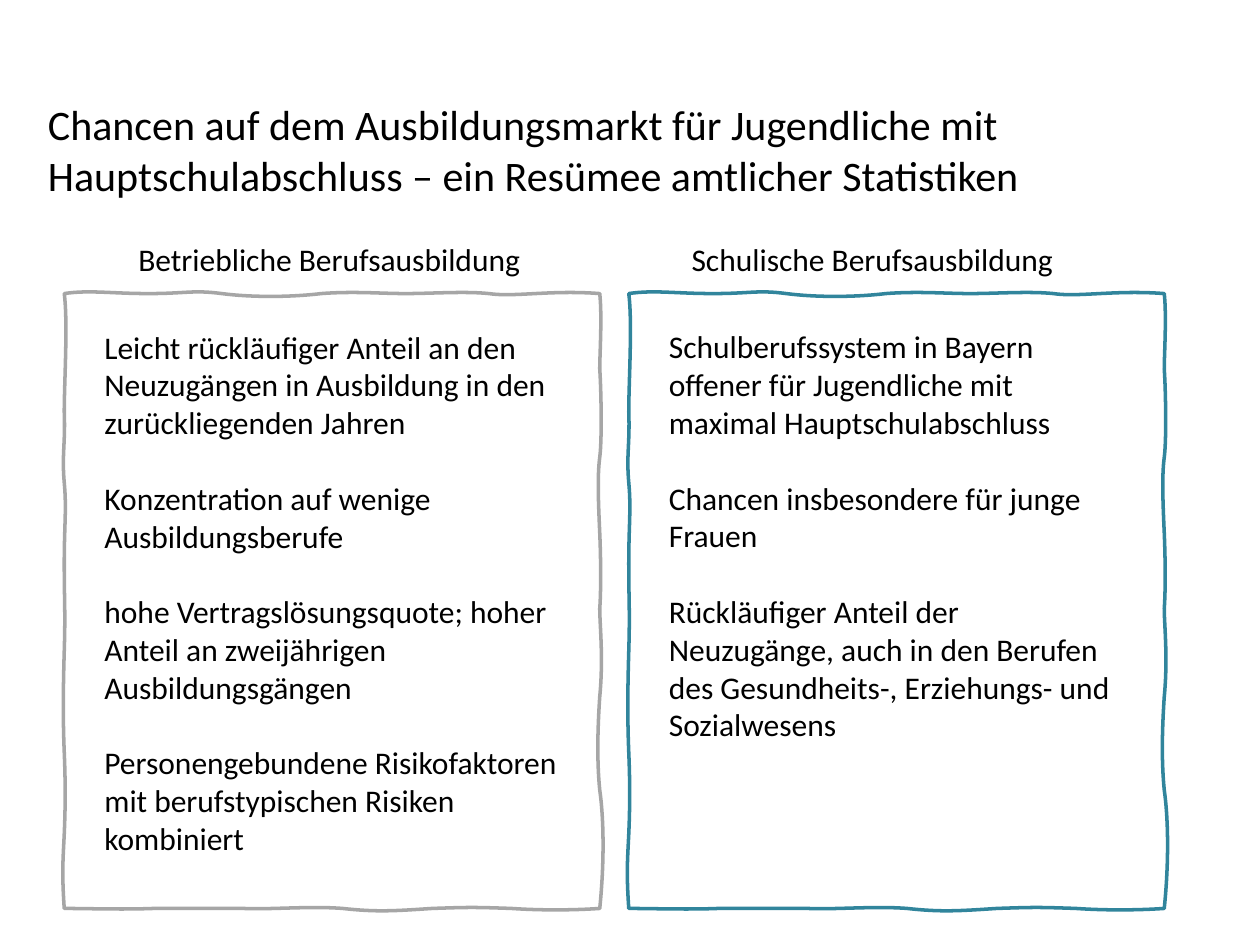
from lxml import etree
from pptx import Presentation, util as u
from pptx.dml.color import RGBColor
from pptx.enum import text
from pptx.oxml import ns

START = (0.51, 2.33)
CURVES = [
    (0.71, 2.3, 0.88, 2.33, 1.18, 2.33), (1.48, 2.33, 1.53, 2.3, 1.76, 2.33),
    (1.99, 2.36, 2.3, 2.36, 2.55, 2.33), (2.81, 2.31, 3.02, 2.33, 3.22, 2.33),
    (3.42, 2.33, 3.69, 2.31, 3.88, 2.33), (4.08, 2.36, 4.37, 2.3, 4.76, 2.33),
    (4.78, 2.51, 4.76, 2.81, 4.76, 2.93), (4.77, 3.06, 4.78, 3.48, 4.76, 3.63),
    (4.74, 3.78, 4.75, 4, 4.76, 4.23), (4.77, 4.46, 4.77, 4.7, 4.76, 4.83),
    (4.76, 4.96, 4.79, 5.22, 4.76, 5.53), (4.74, 5.83, 4.74, 6.07, 4.76, 6.27),
    (4.79, 6.48, 4.8, 6.82, 4.76, 7.21), (4.62, 7.22, 4.35, 7.23, 4.06, 7.21),
    (3.76, 7.2, 3.73, 7.2, 3.43, 7.21), (3.13, 7.23, 2.99, 7.24, 2.72, 7.21),
    (2.46, 7.19, 2.15, 7.22, 1.93, 7.21), (1.7, 7.21, 1.47, 7.21, 1.22, 7.21),
    (0.97, 7.22, 0.69, 7.21, 0.51, 7.21), (0.49, 6.92, 0.5, 6.83, 0.51, 6.62),
    (0.52, 6.4, 0.52, 6.2, 0.51, 5.97), (0.5, 5.73, 0.5, 5.5, 0.51, 5.17),
    (0.52, 4.84, 0.51, 4.79, 0.51, 4.47), (0.51, 4.16, 0.53, 4.04, 0.51, 3.83),
    (0.49, 3.61, 0.52, 3.52, 0.51, 3.27), (0.51, 3.03, 0.54, 2.56, 0.51, 2.33),
]
COLUMNS = [
    dict(offset=0, line="A6A6A6", heading="Betriebliche Berufsausbildung",
         heading_at=(1, 1.86, 3.27, 0.4), body_at=(0.73, 2.55, 3.82, 4.95),
         points=["Leicht rückläufiger Anteil an den Neuzugängen in Ausbildung in den zurückliegenden Jahren",
                 "Konzentration auf wenige Ausbildungsberufe",
                 "hohe Vertragslösungsquote; hoher Anteil an zweijährigen Ausbildungsgängen",
                 "Personengebundene Risikofaktoren mit berufstypischen Risiken kombiniert"]),
    dict(offset=4.48, line="31859C", heading="Schulische Berufsausbildung",
         heading_at=(5.39, 1.86, 3.11, 0.4), body_at=(5.21, 2.55, 3.82, 4.34),
         points=["Schulberufssystem in Bayern offener für Jugendliche mit maximal Hauptschulabschluss",
                 "Chancen insbesondere für junge Frauen",
                 "Rückläufiger Anteil der Neuzugänge, auch in den Berufen des Gesundheits-, Erziehungs- und Sozialwesens"]),
]


def color(value):
    return RGBColor.from_string(value)


def write(box, at, lines, size, frame_format):
    for name, value in zip(("left", "top", "width", "height"), at):
        setattr(box, name, u.Inches(value))
    frame = box.text_frame
    for name, value in frame_format.items():
        setattr(frame, name, value)
    for index, line in enumerate(lines):
        para = frame.add_paragraph() if index else frame.paragraphs[0]
        para.alignment = text.PP_ALIGN.LEFT
        para.space_before = u.Pt(21.6 if index else 0)
        span = para.add_run()
        span.text = line
        for name, value in dict(name="Calibri", size=u.Pt(size)).items():
            setattr(span.font, name, value)
        span.font.color.rgb = color("000000")


deck = Presentation()
deck.slide_width, deck.slide_height = u.Inches(10), u.Inches(7.5)
page = deck.slides.add_slide(deck.slide_layouts[5])

write(page.shapes.title, (0.28, 0.84, 9.53, 0.69),
      ["Chancen auf dem Ausbildungsmarkt für Jugendliche mit Hauptschulabschluss – ein Resümee amtlicher Statistiken"],
      24, dict(word_wrap=True, auto_size=text.MSO_AUTO_SIZE.NONE,
               vertical_anchor=text.MSO_ANCHOR.MIDDLE))

for column in reversed(COLUMNS):
    shift = column["offset"]
    corners = [(u.Inches(x + shift), u.Inches(y)) for *_, x, y in CURVES]
    builder = page.shapes.build_freeform(u.Inches(START[0] + shift), u.Inches(START[1]))
    builder.add_line_segments(corners, close=True)
    panel = builder.convert_to_shape()
    for segment, curve in zip(panel.element.findall(".//" + ns.qn("a:lnTo")), CURVES):
        segment.tag = ns.qn("a:cubicBezTo")
        segment.remove(segment[0])
        for x, y in zip(curve[::2], curve[1::2]):
            etree.SubElement(segment, ns.qn("a:pt"), x=str(u.Inches(x - START[0])),
                             y=str(u.Inches(y - START[1])))
    panel.shadow.inherit = False
    panel.fill.background()
    panel.line.color.rgb = color(column["line"])
    panel.line.width = u.Pt(2)

for column in COLUMNS:
    write(page.shapes.add_textbox(0, 0, 0, 0), column["heading_at"], [column["heading"]], 18,
          dict(word_wrap=False, auto_size=text.MSO_AUTO_SIZE.SHAPE_TO_FIT_TEXT))

for column in COLUMNS:
    write(page.shapes.add_textbox(0, 0, 0, 0), column["body_at"], column["points"], 18,
          dict(word_wrap=True, auto_size=text.MSO_AUTO_SIZE.SHAPE_TO_FIT_TEXT))

deck.save("out.pptx")
